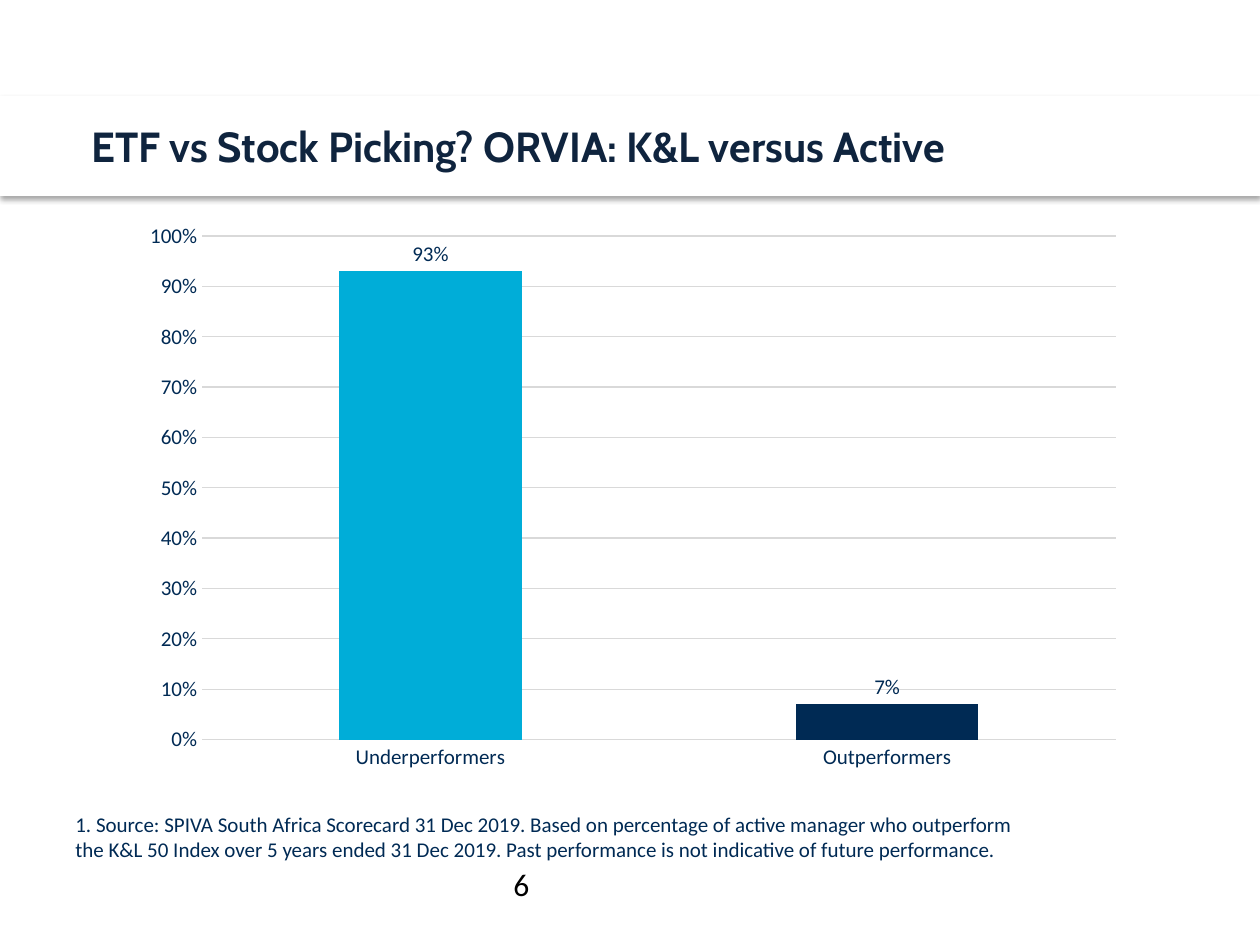
from lxml import etree
from pptx import Presentation
from pptx.chart.data import CategoryChartData
from pptx.dml.color import RGBColor
from pptx.enum.chart import XL_CHART_TYPE as Kind, XL_LABEL_POSITION as Spot, XL_TICK_MARK as Tick
from pptx.enum.shapes import MSO_SHAPE as Shape
from pptx.enum.text import MSO_ANCHOR as Anchor
from pptx.oxml import parse_xml
from pptx.oxml.ns import nsdecls, qn
from pptx.util import Pt

PX = 914400 / 126
NAVY = "002A54"
BARS = [("Underperformers", 0.93, "00ADD8"), ("Outperformers", 0.07, NAVY)]
PLOT = {"x": 0.1, "y": 0.074, "w": 0.853, "h": 0.842}
BAND = (0, 96, 1260, 100)
CHART = (95, 192, 1071, 598)
TEXTS = [
    ("ETF vs Stock Picking? ORVIA: K&L versus Active",
     (79, 96, 1102, 100), "Cabin", 24, "0F243E", True, Anchor.MIDDLE),
    ("6", (501, 859, 262, 63), "Calibri", 18, "000000", False, Anchor.TOP),
    ("1. Source: SPIVA South Africa Scorecard 31 Dec 2019. Based on percentage of "
     "active manager who outperform the K&L 50 Index over 5 years ended 31 Dec 2019. "
     "Past performance is not indicative of future performance.",
     (63, 805, 968, 115), "Calibri", 12, NAVY, False, Anchor.TOP),
]


def emu(box):
    return [round(n * PX) for n in box]


def rgb(code):
    return RGBColor.from_string(code)


def style(font, name, size, color, bold=False):
    font.name, font.size, font.bold = name, Pt(size), bold
    font.color.rgb = rgb(color)


def paint(fill, color):
    fill.solid()
    fill.fore_color.rgb = rgb(color)


def add_band(slide):
    band = slide.shapes.add_shape(Shape.RECTANGLE, *emu(BAND))
    paint(band.fill, "FFFFFF")
    band.line.fill.background()
    band.shadow.inherit = False
    glow = band.element.spPr.find(qn("a:effectLst"))
    glow.append(parse_xml(
        f'<a:outerShdw {nsdecls("a")} blurRad="40000" dist="23000" dir="5400000" '
        'rotWithShape="0"><a:srgbClr val="000000"><a:alpha val="35000"/>'
        '</a:srgbClr></a:outerShdw>'))


def add_text(slide, text, box, name, size, color, bold, anchor):
    frame = slide.shapes.add_textbox(*emu(box)).text_frame
    frame.word_wrap = True
    frame.vertical_anchor = anchor
    para = frame.paragraphs[0]
    para.text = text
    style(para.font, name, size, color, bold)


def set_plot(chart):
    area = chart.element.find(".//" + qn("c:plotArea"))
    for old in area.findall(qn("c:layout")):
        area.remove(old)
    layout = etree.Element(qn("c:layout"))
    manual = etree.SubElement(layout, qn("c:manualLayout"))
    rules = [("layoutTarget", "inner"), ("xMode", "edge"), ("yMode", "edge")]
    for tag, val in rules + list(PLOT.items()):
        etree.SubElement(manual, qn("c:" + tag)).set("val", str(val))
    area.insert(0, layout)


def add_bars(slide):
    data = CategoryChartData(number_format="0%")
    data.categories = [bar[0] for bar in BARS]
    data.add_series("Series 1", [bar[1] for bar in BARS])
    chart = slide.shapes.add_chart(Kind.COLUMN_CLUSTERED, *emu(CHART), data).chart
    chart.has_legend = chart.has_title = False
    style(chart.font, "Calibri", 12, NAVY)
    set_plot(chart)

    plot = chart.plots[0]
    plot.gap_width = 150
    plot.vary_by_categories = False
    row = plot.series[0]
    for i, bar in enumerate(BARS):
        paint(row.points[i].format.fill, bar[2])
    tags = row.data_labels
    tags.show_value = True
    tags.number_format, tags.number_format_is_linked = "0%", False
    tags.position = Spot.OUTSIDE_END
    style(tags.font, "Calibri", 12, NAVY)

    for axis in (chart.category_axis, chart.value_axis):
        axis.major_tick_mark = axis.minor_tick_mark = Tick.NONE
        axis.format.line.fill.background()
        style(axis.tick_labels.font, "Calibri", 12, NAVY)
    axis = chart.value_axis
    axis.minimum_scale, axis.maximum_scale, axis.major_unit = 0, 1, 0.1
    axis.tick_labels.number_format = "0%"
    axis.tick_labels.number_format_is_linked = False
    grid = axis.major_gridlines.format.line
    grid.width = Pt(0.75)
    grid.color.rgb = rgb("D9D9D9")


def main():
    deck = Presentation()
    deck.slide_width, deck.slide_height = emu((1260, 945))
    slide = deck.slides.add_slide(deck.slide_layouts[6])
    add_band(slide)
    add_bars(slide)
    for item in TEXTS:
        add_text(slide, *item)
    deck.save("out.pptx")


if __name__ == "__main__":
    main()
